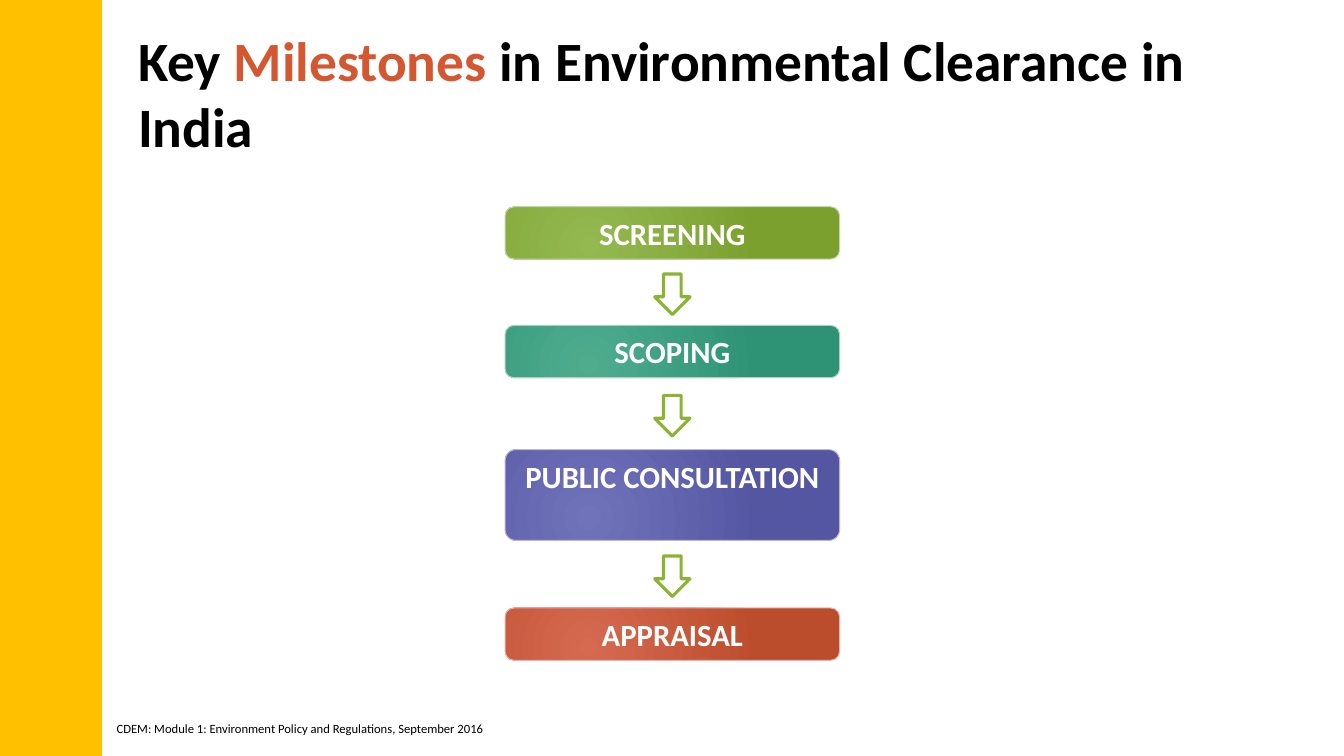
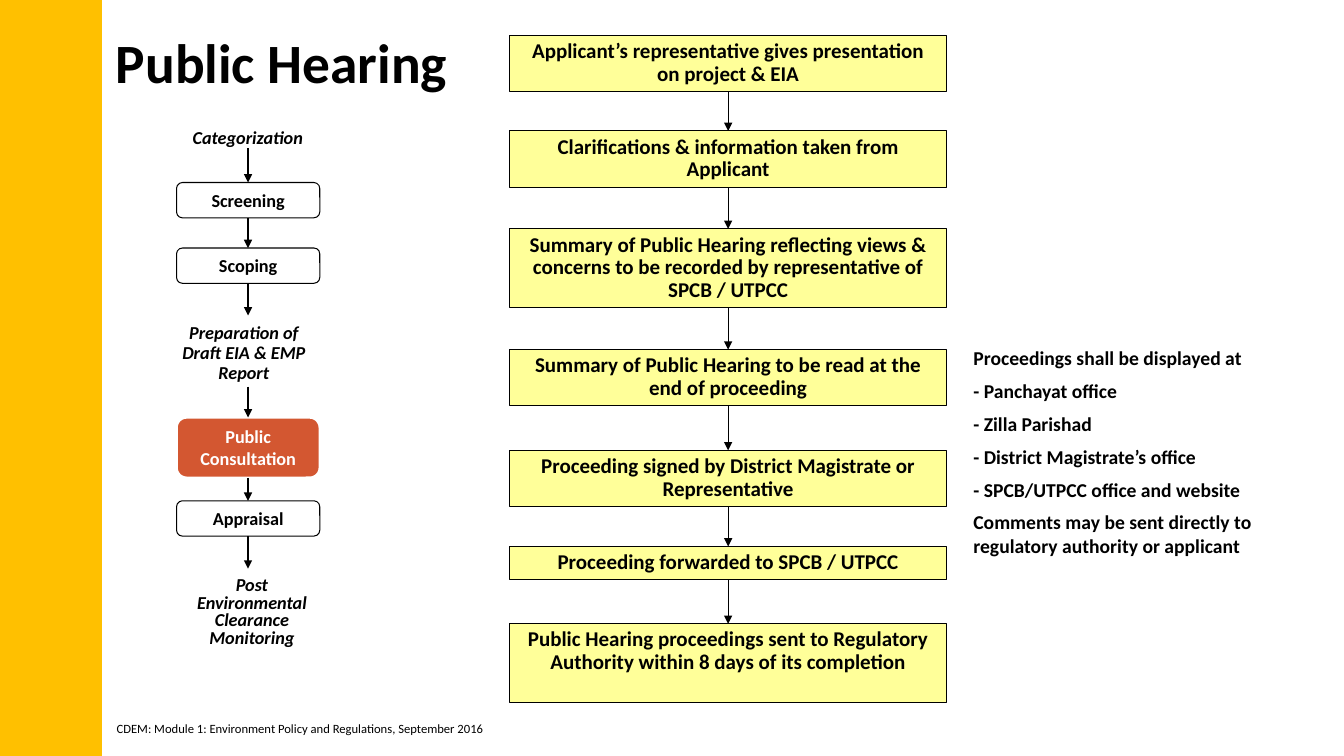
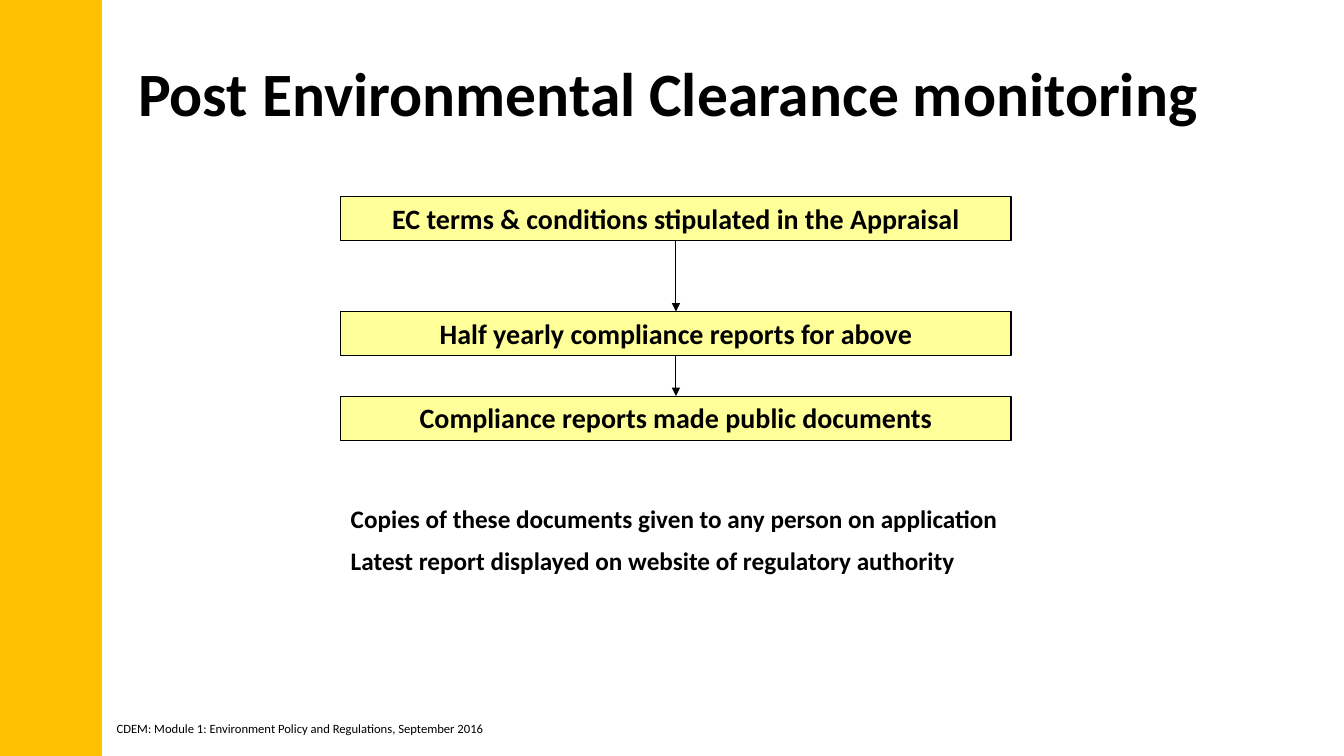
from dataclasses import dataclass

import lxml.etree
import pptx
import pptx.dml.color
import pptx.enum.shapes
import pptx.enum.text
import pptx.oxml.ns
import pptx.util

Cm = pptx.util.Cm
Pt = pptx.util.Pt
SHAPE = pptx.enum.shapes.MSO_SHAPE
ALIGN = pptx.enum.text.PP_ALIGN
ANCHOR = pptx.enum.text.MSO_ANCHOR
qn = pptx.oxml.ns.qn


@dataclass(frozen=True)
class Theme:
    font: str = "Calibri"
    black: str = "000000"
    white: str = "FFFFFF"
    band: str = "FFC000"
    accent: str = "D35731"
    step: str = "FFFF99"
    arrow: str = "8BB434"
    title: float = 39.6
    large_title: float = 44
    milestone: float = 22
    stage: float = 13
    hearing: float = 15
    note: float = 14
    monitoring: float = 20
    monitoring_note: float = 18
    footer: float = 9
    thin: float = 0.75


THEME = Theme()
FOOTER = "CDEM: Module 1: Environment Policy and Regulations, September 2016"


def rgb(value):
    return pptx.dml.color.RGBColor.from_string(value)


def write_text(frame, text, *, size, color=THEME.black, bold=True, italic=False,
               align=ALIGN.LEFT, anchor=ANCHOR.TOP, spacing=1.0, gap=0, wrap=True):
    """Fill a frame from a string or a list of paragraphs.

    A paragraph is a string or a list of (words, color) runs.
    """
    frame.word_wrap = wrap
    frame.vertical_anchor = anchor
    paragraphs = [text] if isinstance(text, str) else text
    for index, content in enumerate(paragraphs):
        paragraph = frame.add_paragraph() if index else frame.paragraphs[0]
        paragraph.alignment = align
        paragraph.line_spacing = spacing
        if index:
            paragraph.space_before = Pt(gap)
        runs = [(content, color)] if isinstance(content, str) else content
        for words, run_color in runs:
            run = paragraph.add_run()
            run.text = words
            run.font.name = THEME.font
            run.font.size = Pt(size)
            run.font.bold = bold
            run.font.italic = italic
            run.font.color.rgb = rgb(run_color)


def add_text(slide, left, top, width, height, text, **text_format):
    box = slide.shapes.add_textbox(Cm(left), Cm(top), Cm(width), Cm(height))
    write_text(box.text_frame, text, **text_format)


def add_box(slide, left, top, width, height, kind=SHAPE.RECTANGLE,
            fill=None, line=None, line_width=THEME.thin):
    box = slide.shapes.add_shape(kind, Cm(left), Cm(top), Cm(width), Cm(height))
    box.shadow.inherit = False
    if fill:
        box.fill.solid()
        box.fill.fore_color.rgb = rgb(fill)
    else:
        box.fill.background()
    if line:
        box.line.color.rgb = rgb(line)
        box.line.width = Pt(line_width)
    else:
        box.line.fill.background()
    return box


def apply_glow(box, inner, outer):
    """Fill with a radial gradient centred low on the left."""
    box.fill.gradient()
    for stop, color in zip(box.fill.gradient_stops, (inner, outer)):
        stop.color.rgb = rgb(color)
    gradient = box._element.spPr.find(qn("a:gradFill"))
    gradient.remove(gradient.find(qn("a:lin")))
    glow = lxml.etree.SubElement(gradient, qn("a:path"), path="circle")
    lxml.etree.SubElement(glow, qn("a:fillToRect"),
                          l="50000", t="100000", r="100000", b="50000")


def add_down_connector(slide, x, top, bottom, width=THEME.thin):
    connector = slide.shapes.add_connector(
        pptx.enum.shapes.MSO_CONNECTOR.STRAIGHT, Cm(x), Cm(top), Cm(x), Cm(bottom))
    connector.line.color.rgb = rgb(THEME.black)
    connector.line.width = Pt(width)
    lxml.etree.SubElement(connector.line._get_or_add_ln(), qn("a:tailEnd"), type="triangle")
    lxml.etree.SubElement(connector._element.spPr, qn("a:effectLst"))


def add_step_chain(slide, left, width, steps, **text_format):
    """Stack yellow boxes from (text, top, height) and link each to the next."""
    previous_bottom = None
    for text, top, height in steps:
        box = add_box(slide, left, top, width, height, fill=THEME.step, line=THEME.black)
        write_text(box.text_frame, text, align=ALIGN.CENTER, **text_format)
        if previous_bottom is not None:
            add_down_connector(slide, left + width / 2, previous_bottom, top)
        previous_bottom = top + height


def add_base_slide(deck, title, title_area=(3.23, 0.61, 28.73, 3.43), title_size=THEME.title):
    slide = deck.slides.add_slide(deck.slide_layouts[6])
    add_box(slide, 0, 0, 2.57, 19.05, fill=THEME.band)
    add_text(slide, 2.69, 18.03, 9.93, 0.64, FOOTER,
             size=THEME.footer, bold=False, wrap=False)
    add_text(slide, *title_area, title, size=title_size, anchor=ANCHOR.MIDDLE)
    return slide


def build_milestones(deck):
    slide = add_base_slide(deck, [[("Key ", THEME.black), ("Milestones", THEME.accent),
                                   (" in Environmental Clearance in India", THEME.black)]])
    left, width = 12.73, 8.43
    arrow_width, arrow_height = 0.89, 1.02
    milestones = [
        ("SCREENING", 5.21, 1.32, "94B951", "7CA02E", "C4D6AE"),
        ("SCOPING", 8.2, 1.32, "4FAD8E", "2D9374", "AECFC1"),
        ("PUBLIC CONSULTATION", 11.33, 2.29, "7173BA", "5456A2", "B7B7D6"),
        ("APPRAISAL", 15.32, 1.32, "D66A51", "BC4D2C", "E6B4AE"),
    ]
    previous_bottom = None
    for name, top, height, inner, outer, edge in milestones:
        box = add_box(slide, left, top, width, height, SHAPE.ROUNDED_RECTANGLE, line=edge)
        box.adjustments[0] = 0.12 if height > 2 else 0.17
        apply_glow(box, inner, outer)
        write_text(box.text_frame, name, size=THEME.milestone, color=THEME.white,
                   align=ALIGN.CENTER)
        if previous_bottom is not None:
            arrow_top = (previous_bottom + top - arrow_height) / 2 + 0.05
            add_box(slide, left + (width - arrow_width) / 2, arrow_top,
                    arrow_width, arrow_height, SHAPE.DOWN_ARROW,
                    fill=THEME.white, line=THEME.arrow, line_width=2.25)
        previous_bottom = top + height


def add_clearance_stages(slide):
    """Draw the overview: italic captions without outline, boxed stages, one highlighted."""
    axis, boxed_width, caption_overlap = 6.25, 3.61, 0.17
    boxed = dict(line=THEME.black)
    current = dict(fill=THEME.accent, line=THEME.white, line_width=1.75)
    caption = {}
    stages = [
        ("Categorization", 4.24, 3.12, 4.01, 0.79, caption, 0.8),
        ("Screening", 4.45, 4.6, boxed_width, 0.89, boxed, 1.0),
        ("Scoping", 4.45, 6.25, boxed_width, 0.89, boxed, 1.0),
        ("Preparation of Draft EIA & EMP Report", 4.24, 7.95, 3.81, 1.96, caption, 0.9),
        ("Public Consultation", 4.45, 10.52, boxed_width, 1.52, current, 1.0),
        ("Appraisal", 4.45, 12.62, boxed_width, 0.89, boxed, 1.0),
        ("Post Environmental Clearance Monitoring", 4.24, 14.33, 4.22, 2.26, caption, 0.8),
    ]
    arrow_start = None
    for name, left, top, width, height, look, spacing in stages:
        box = add_box(slide, left, top, width, height, SHAPE.ROUNDED_RECTANGLE, **look)
        write_text(box.text_frame, name, size=THEME.stage, align=ALIGN.CENTER,
                   color=THEME.white if look is current else THEME.black,
                   italic=look is caption, spacing=spacing)
        if arrow_start is not None:
            add_down_connector(slide, axis, arrow_start, top, width=1)
        arrow_start = top + height - (caption_overlap if look is caption else 0)


def build_public_hearing(deck):
    slide = add_base_slide(deck, "Public Hearing", title_area=(2.67, 0.03, 9.02, 3.05))
    add_step_chain(slide, 12.85, 11, [
        ("Applicant’s representative gives presentation on project & EIA", 0.89, 1.42),
        ("Clarifications & information taken from Applicant", 3.3, 1.42),
        ("Summary of Public Hearing reflecting views & concerns to be recorded by "
         "representative of SPCB / UTPCC", 5.77, 1.98),
        ("Summary of Public Hearing to be read at the end of proceeding", 8.81, 1.42),
        ("Proceeding signed by District Magistrate or Representative", 11.35, 1.42),
        ("Proceeding forwarded to SPCB / UTPCC", 13.77, 0.84),
        ("Public Hearing proceedings sent to Regulatory Authority within 8 days of its "
         "completion", 15.72, 1.98),
    ], size=THEME.hearing, spacing=0.9)
    add_text(slide, 24.28, 8.59, 7.82, 5.94, [
        "Proceedings shall be displayed at",
        "- Panchayat office",
        "- Zilla Parishad",
        "- District Magistrate’s office",
        "- SPCB/UTPCC office and website",
        "Comments may be sent directly to regulatory authority or applicant",
    ], size=THEME.note, gap=6.7)
    add_clearance_stages(slide)


def build_monitoring(deck):
    slide = add_base_slide(deck, "Post Environmental Clearance monitoring",
                           title_size=THEME.large_title)
    left, width = 8.59, 16.89
    add_step_chain(slide, left, width, [
        ("EC terms & conditions stipulated in the Appraisal", 4.95, 1.12),
        ("Half yearly compliance reports for above", 7.85, 1.12),
        ("Compliance reports made public documents", 9.98, 1.12),
    ], size=THEME.monitoring)
    add_text(slide, left, 12.57, width, 2.95, [
        "Copies of these documents given to any person on application",
        "Latest report displayed on website of regulatory authority",
    ], size=THEME.monitoring_note, gap=8)


def main():
    deck = pptx.Presentation()
    deck.slide_width, deck.slide_height = Cm(33.87), Cm(19.05)
    build_milestones(deck)
    build_public_hearing(deck)
    build_monitoring(deck)
    deck.save("out.pptx")


if __name__ == "__main__":
    main()
